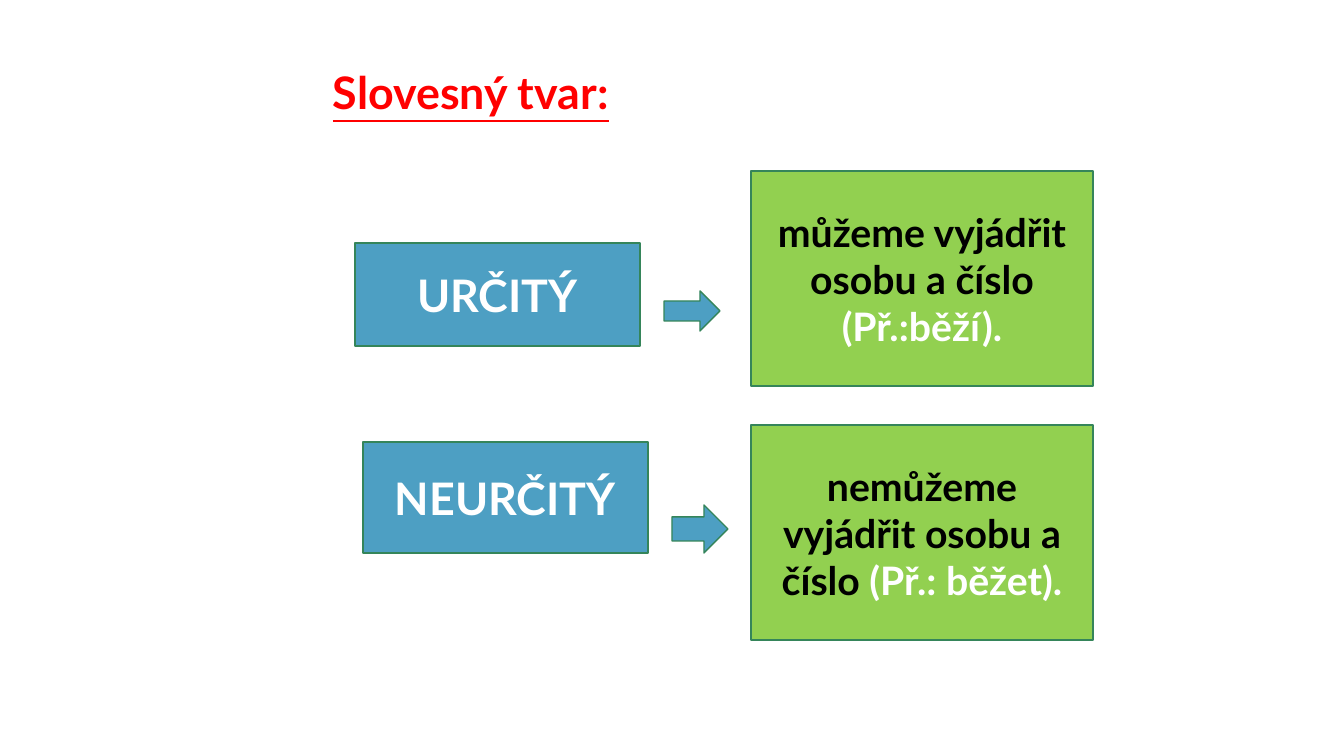
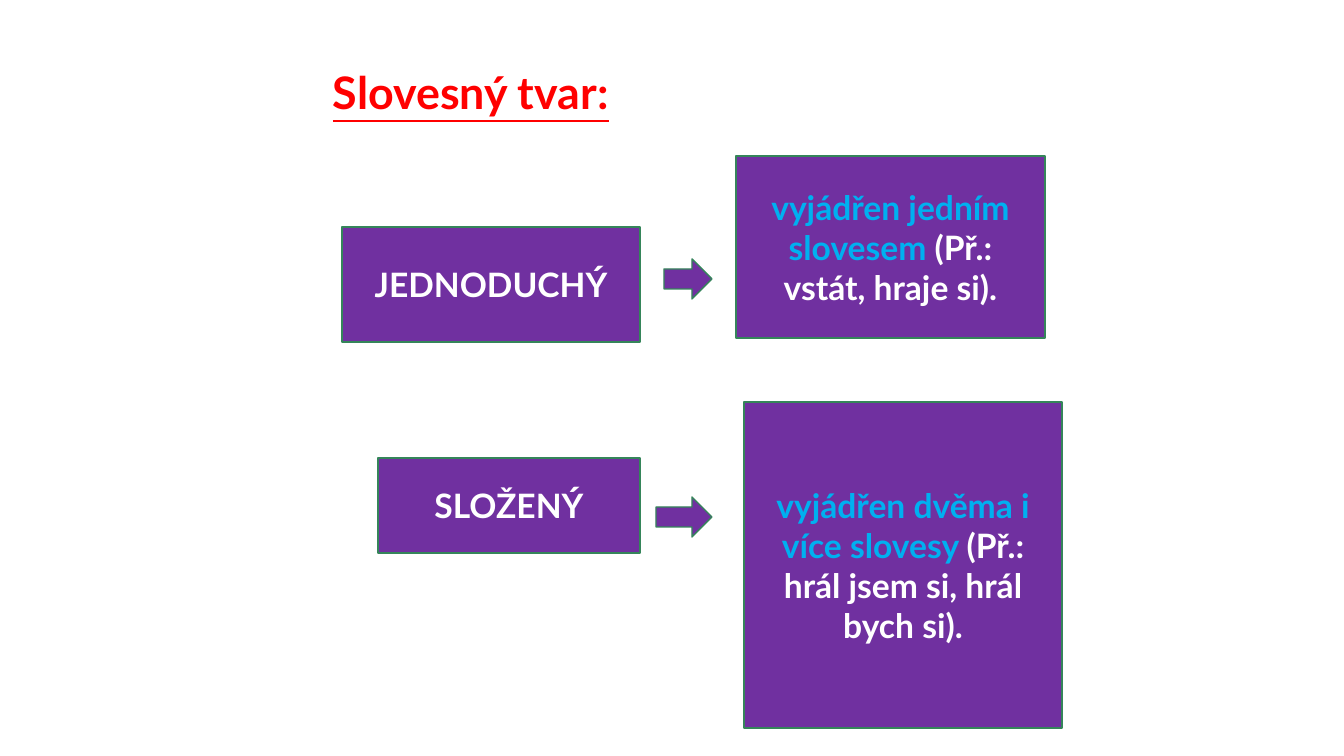
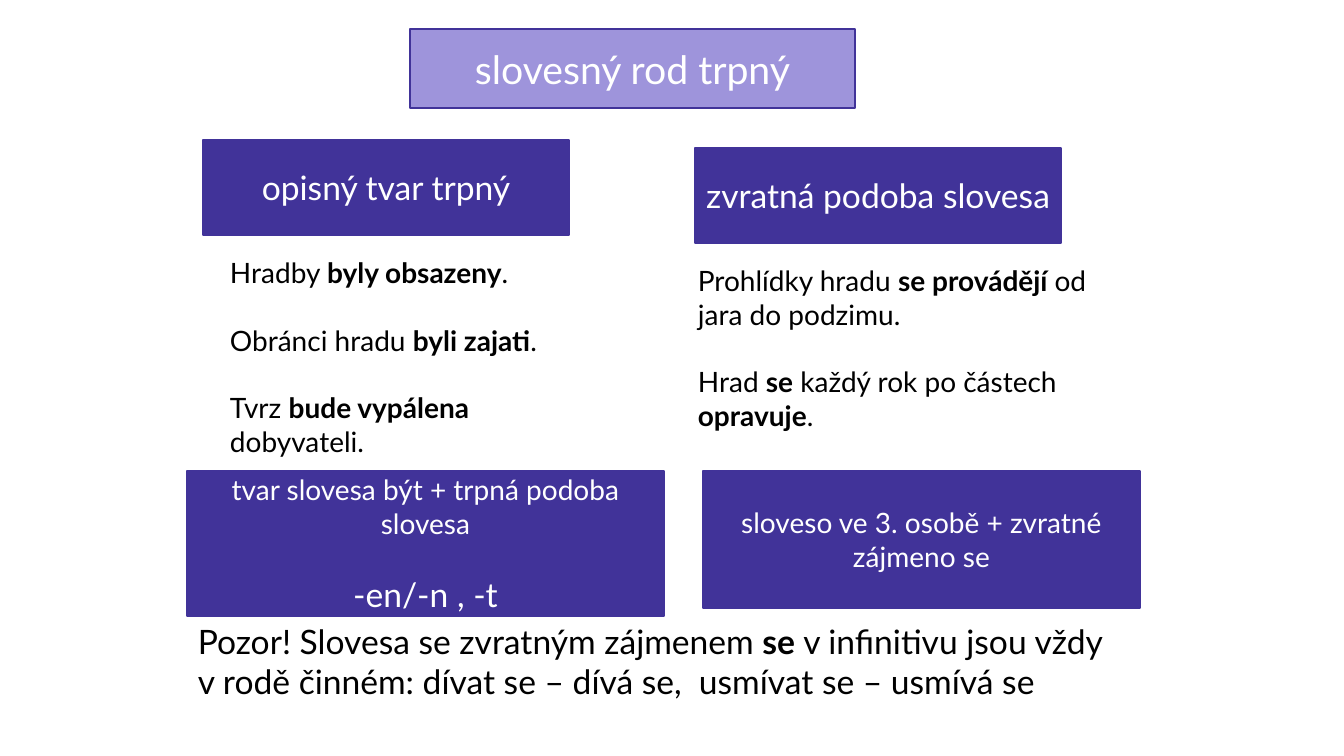
from pptx import Presentation
from pptx.dml.color import RGBColor
from pptx.enum.shapes import MSO_SHAPE
from pptx.enum.text import MSO_ANCHOR, PP_ALIGN
from pptx.util import Emu, Pt

# Shared look
EMU_PER_PX = 914400 / 100.8
FONT = "Lato"
WHITE, BLACK, RED = "FFFFFF", "000000", "FF0000"
BLUE, GREEN, PURPLE, SKY = "4D9FC3", "92D050", "7030A0", "00B0F0"
EDGE, INDIGO, LAVENDER = "35855A", "413399", "9E94DB"
BOLD = {"bold": True}
EXAMPLE = {"color": WHITE}

# Verb form slides: each row is term, arrow, explanation, with (x, y, w, h) in px
FORM_TITLE = "Slovesný tvar:"
FORM_TITLE_AT = (323, 60, 300, 70)
FORM_SLIDES = [
    {
        "term_fill": BLUE, "term_size": 32,
        "meaning_fill": GREEN, "meaning_size": 28, "meaning_color": BLACK,
        "rows": [
            ("URČITÝ", (355, 243, 285, 103), (664, 291, 56, 40),
             "můžeme vyjádřit osobu a číslo ", "(Př.:běží).", (751, 171, 342, 215)),
            ("NEURČITÝ", (363, 442, 285, 111), (672, 505, 56, 48),
             "nemůžeme vyjádřit osobu a číslo ", "(Př.: běžet).", (751, 425, 342, 215)),
        ],
    },
    {
        "term_fill": PURPLE, "term_size": 24,
        "meaning_fill": PURPLE, "meaning_size": 24, "meaning_color": SKY,
        "rows": [
            ("JEDNODUCHÝ", (342, 227, 298, 115), (664, 259, 48, 40),
             "vyjádřen jedním slovesem ", "(Př.: vstát, hraje si).",
             (736, 156, 309, 182)),
            ("SLOŽENÝ", (378, 458, 262, 95), (656, 497, 56, 40),
             "vyjádřen dvěma i více slovesy ", "(Př.: hrál jsem si, hrál bych si).",
             (744, 402, 318, 326)),
        ],
    },
]

# Passive voice slide: boxes are place, fill, size, paragraphs
PASSIVE_BOXES = [
    ((410, 29, 445, 79), LAVENDER, 28, [["slovesný rod trpný"]]),
    ((203, 140, 366, 95), INDIGO, 24, [["opisný tvar trpný"]]),
    ((695, 148, 366, 95), INDIGO, 24, [["zvratná podoba slovesa"]]),
    ((187, 471, 477, 145), INDIGO, 20,
     [["tvar slovesa být + trpná podoba slovesa"], [("-en/-n , -t", {"size": 24})]]),
    ((703, 471, 437, 137), INDIGO, 20, [["sloveso ve 3. osobě + zvratné zájmeno se"]]),
]
PASSIVE_NOTES = [
    ((220, 251, 381, 281), 20, [
        ["Hradby ", ("byly obsazeny", BOLD), "."],
        ["Obránci hradu ", ("byli zajati", BOLD), "."],
        ["Tvrz ", ("bude vypálena ", BOLD), "dobyvateli."],
    ]),
    ((688, 259, 452, 179), 20, [
        ["Prohlídky hradu ", ("se provádějí ", BOLD), "od jara do podzimu."],
        ["Hrad ", ("se", BOLD), " každý rok po částech ", ("opravuje", BOLD), "."],
    ]),
    ((188, 616, 936, 132), 24, [
        ["Pozor! Slovesa se zvratným zájmenem ", ("se ", BOLD),
         "v infinitivu jsou vždy v rodě činném: "
         "dívat se – dívá se,  usmívat se – usmívá se"],
    ]),
]
PARAGRAPH_GAP = 24


def px(lengths):
    return [Emu(round(length * EMU_PER_PX)) for length in lengths]


def rgb(value):
    return RGBColor.from_string(value)


def write(shape, paragraphs, size, color=BLACK, bold=False, underline=False,
          align=PP_ALIGN.LEFT, anchor=MSO_ANCHOR.TOP, wrap=True):
    """Fill a shape with paragraphs of plain strings or (string, format) pairs."""
    frame = shape.text_frame
    frame.word_wrap = wrap
    frame.vertical_anchor = anchor
    for number, parts in enumerate(paragraphs):
        paragraph = frame.add_paragraph() if number else frame.paragraphs[0]
        paragraph.alignment = align
        if number:
            paragraph.space_before = Pt(PARAGRAPH_GAP)
        for part in parts:
            words, own = (part, {}) if isinstance(part, str) else part
            run = paragraph.add_run()
            run.text = words
            run.font.name = FONT
            run.font.size = Pt(own.get("size", size))
            run.font.bold = own.get("bold", bold)
            run.font.underline = underline
            run.font.color.rgb = rgb(own.get("color", color))


def add_block(slide, place, fill, edge, kind=MSO_SHAPE.RECTANGLE):
    block = slide.shapes.add_shape(kind, *px(place))
    block.shadow.inherit = False
    block.fill.solid()
    block.fill.fore_color.rgb = rgb(fill)
    block.line.color.rgb = rgb(edge)
    block.line.width = Pt(1)
    return block


def add_box(slide, place, fill, edge, paragraphs, size, **style):
    write(add_block(slide, place, fill, edge), paragraphs, size,
          align=PP_ALIGN.CENTER, anchor=MSO_ANCHOR.MIDDLE, **style)


def add_note(slide, place, paragraphs, size, **style):
    write(slide.shapes.add_textbox(*px(place)), paragraphs, size, **style)


def build_form_slide(slide, look):
    add_note(slide, FORM_TITLE_AT, [[FORM_TITLE]], 32, color=RED,
             bold=True, underline=True, wrap=False)
    for term, term_at, arrow_at, meaning, example, meaning_at in look["rows"]:
        add_box(slide, term_at, look["term_fill"], EDGE, [[term]],
                look["term_size"], color=WHITE, bold=True)
        add_box(slide, meaning_at, look["meaning_fill"], EDGE,
                [[meaning, (example, EXAMPLE)]], look["meaning_size"],
                color=look["meaning_color"], bold=True)
        add_block(slide, arrow_at, look["term_fill"], EDGE, MSO_SHAPE.RIGHT_ARROW)


def build_passive_slide(slide):
    for place, fill, size, paragraphs in PASSIVE_BOXES:
        add_box(slide, place, fill, INDIGO, paragraphs, size, color=WHITE)
    for place, size, paragraphs in PASSIVE_NOTES:
        add_note(slide, place, paragraphs, size)


def main():
    deck = Presentation()
    deck.slide_width, deck.slide_height = px((1344, 756))
    blank = deck.slide_layouts[6]
    for look in FORM_SLIDES:
        build_form_slide(deck.slides.add_slide(blank), look)
    build_passive_slide(deck.slides.add_slide(blank))
    deck.save("out.pptx")


if __name__ == "__main__":
    main()
